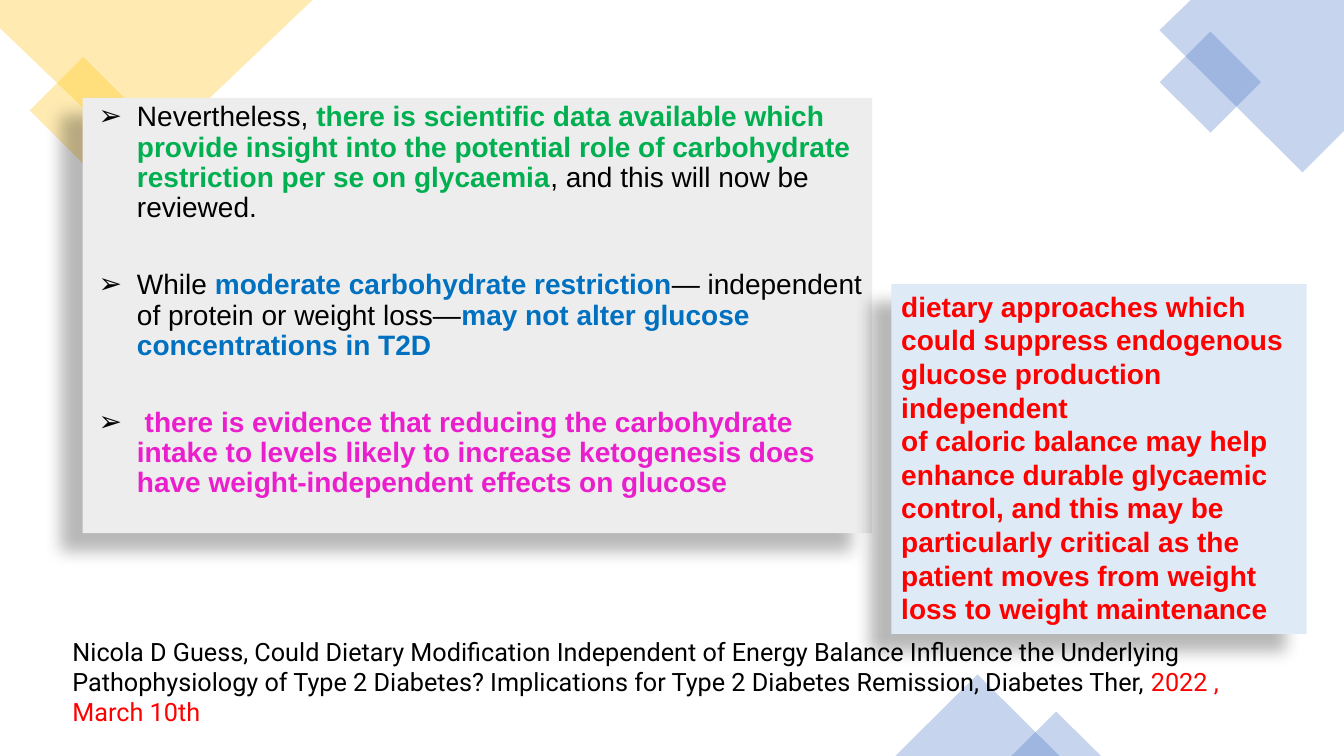
from dataclasses import dataclass

import lxml.etree
import pptx
import pptx.dml.color
import pptx.enum.shapes
import pptx.enum.text
import pptx.oxml.ns
import pptx.util

Inches = pptx.util.Inches
Pt = pptx.util.Pt
Preset = pptx.enum.shapes.MSO_SHAPE
qn = pptx.oxml.ns.qn


@dataclass(frozen=True)
class Theme:
    yellow: str = "FFC000"
    blue: str = "4472C4"
    gray_panel: str = "EDEDED"
    blue_panel: str = "DEEBF7"
    black: str = "000000"
    green: str = "00B050"
    strong_blue: str = "0070C0"
    magenta: str = "EA1ECD"
    red: str = "FF0000"
    body_font: str = "Arial"
    citation_font: str = "Roboto"
    body_size: float = 20
    citation_size: float = 18
    decoration_opacity: int = 30


THEME = Theme()


@dataclass(frozen=True)
class Box:
    left: float
    top: float
    width: float
    height: float

    def lengths(self):
        return [Inches(n) for n in (self.left, self.top, self.width, self.height)]


@dataclass(frozen=True)
class Decoration:
    box: Box
    preset: Preset
    color: str
    rotation: float = 0


@dataclass(frozen=True)
class Outline:
    points: tuple[tuple[float, float], ...]
    color: str


@dataclass(frozen=True)
class Span:
    text: str
    color: str = THEME.black
    bold: bool = False


SQUARES_AND_TRIANGLES = (
    Decoration(Box(0.45, 0.72, 0.75, 0.75), Preset.RECTANGLE, THEME.yellow, 45),
    Decoration(Box(11.65, 0.46, 0.71, 0.71), Preset.RECTANGLE, THEME.blue, 45),
    Decoration(Box(8.88, 6.69, 1.63, 0.81), Preset.ISOSCELES_TRIANGLE, THEME.blue),
    Decoration(Box(10.03, 7.06, 0.89, 0.44), Preset.ISOSCELES_TRIANGLE, THEME.blue),
)
CORNERS = (
    Outline(((0, 0), (3.1, 0), (1.4, 1.62), (0, 0.28)), THEME.yellow),
    Outline(((11.81, 0), (13.33, 0), (13.33, 1.3), (12.92, 1.71), (11.5, 0.3)), THEME.blue),
)
FINDINGS = (
    (
        Span("Nevertheless, "),
        Span("there is scientific data available which provide insight into the potential "
             "role of carbohydrate restriction per se on glycaemia", THEME.green, True),
        Span(", and this will now be reviewed."),
    ),
    (
        Span("While "),
        Span("moderate carbohydrate restriction", THEME.strong_blue, True),
        Span("— independent of protein or weight loss—"),
        Span("may not alter glucose concentrations in T2D", THEME.strong_blue, True),
    ),
    (
        Span(" "),
        Span("there is evidence that reducing the carbohydrate intake to levels likely to "
             "increase ketogenesis does have weight-independent effects on glucose",
             THEME.magenta, True),
    ),
)
CONCLUSION = (
    (Span("dietary approaches which could suppress endogenous glucose production independent",
          THEME.red, True),),
    (Span("of caloric balance may help enhance durable glycaemic control, and this may be "
          "particularly critical as the patient moves from weight loss to weight maintenance",
          THEME.red, True),),
)
CITATION = (
    (
        Span("Nicola D Guess, Could Dietary Modification Independent of Energy Balance Influence "
             "the Underlying Pathophysiology of Type 2 Diabetes? Implications for Type 2 Diabetes "
             "Remission, Diabetes Ther, "),
        Span("2022 , March 10th", THEME.red),
    ),
)


def paint(shape, color: str, opacity: int = 100) -> None:
    shape.shadow.inherit = False
    shape.line.fill.background()
    shape.fill.solid()
    shape.fill.fore_color.rgb = pptx.dml.color.RGBColor.from_string(color)
    if opacity < 100:
        color_element = shape._element.spPr.find(f".//{qn('a:srgbClr')}")
        lxml.etree.SubElement(color_element, qn("a:alpha"), val=str(opacity * 1000))


def add_decoration(slide, decoration: Decoration) -> None:
    shape = slide.shapes.add_shape(decoration.preset, *decoration.box.lengths())
    shape.rotation = decoration.rotation
    paint(shape, decoration.color, THEME.decoration_opacity)


def add_corner(slide, corner: Outline) -> None:
    points = [(Inches(x), Inches(y)) for x, y in corner.points]
    builder = slide.shapes.build_freeform(*points[0])
    builder.add_line_segments(points[1:], close=True)
    paint(builder.convert_to_shape(), corner.color, THEME.decoration_opacity)


def add_panel(slide, box: Box, color: str):
    """Add a filled rectangle with a soft shadow to its lower left."""
    shape = slide.shapes.add_shape(Preset.RECTANGLE, *box.lengths())
    paint(shape, color)
    effects = shape._element.spPr.find(qn("a:effectLst"))
    shadow = lxml.etree.SubElement(
        effects, qn("a:outerShdw"), blurRad=str(Pt(11.8)), dist=str(Pt(19.7)),
        dir=str(141 * 60000), algn="tr", rotWithShape="0")
    shadow_color = lxml.etree.SubElement(shadow, qn("a:srgbClr"), val=THEME.black)
    lxml.etree.SubElement(shadow_color, qn("a:alpha"), val="28000")
    return shape


def add_bullet(paragraph, character: str) -> None:
    properties = paragraph._p.get_or_add_pPr()
    properties.set("marL", str(Inches(0.44)))
    properties.set("indent", str(Inches(-0.38)))
    lxml.etree.SubElement(properties, qn("a:buFont"), typeface=THEME.body_font)
    lxml.etree.SubElement(properties, qn("a:buChar"), char=character)


def write_text(shape, paragraphs: tuple[tuple[Span, ...], ...], *, font: str = THEME.body_font,
               size: float = THEME.body_size, line_spacing: float = 1.0,
               space_after: float = 0, bullet: str = "", grow: bool = False) -> None:
    frame = shape.text_frame
    frame.word_wrap = True
    frame.vertical_anchor = pptx.enum.text.MSO_ANCHOR.TOP
    fit = pptx.enum.text.MSO_AUTO_SIZE
    frame.auto_size = fit.SHAPE_TO_FIT_TEXT if grow else fit.NONE
    for index, spans in enumerate(paragraphs):
        paragraph = frame.add_paragraph() if index else frame.paragraphs[0]
        paragraph.alignment = pptx.enum.text.PP_ALIGN.LEFT
        paragraph.line_spacing = line_spacing
        paragraph.space_after = Pt(space_after)
        if bullet:
            add_bullet(paragraph, bullet)
        for span in spans:
            run = paragraph.add_run()
            run.text = span.text
            run.font.name = font
            run.font.size = Pt(size)
            run.font.bold = span.bold
            run.font.color.rgb = pptx.dml.color.RGBColor.from_string(span.color)


def main() -> None:
    presentation = pptx.Presentation()
    presentation.slide_width = Inches(13.33)
    presentation.slide_height = Inches(7.5)
    slide = presentation.slides.add_slide(presentation.slide_layouts[6])

    for corner in CORNERS:
        add_corner(slide, corner)
    for decoration in SQUARES_AND_TRIANGLES:
        add_decoration(slide, decoration)

    findings = add_panel(slide, Box(0.82, 0.97, 7.83, 4.32), THEME.gray_panel)
    write_text(findings, FINDINGS, line_spacing=0.9, space_after=33.5, bullet="➢")

    citation = slide.shapes.add_textbox(*Box(0.62, 6.26, 12.25, 1.01).lengths())
    write_text(citation, CITATION, font=THEME.citation_font, size=THEME.citation_size, grow=True)

    conclusion = add_panel(slide, Box(8.84, 2.82, 4.12, 3.47), THEME.blue_panel)
    write_text(conclusion, CONCLUSION, grow=True)

    presentation.save("out.pptx")


if __name__ == "__main__":
    main()
